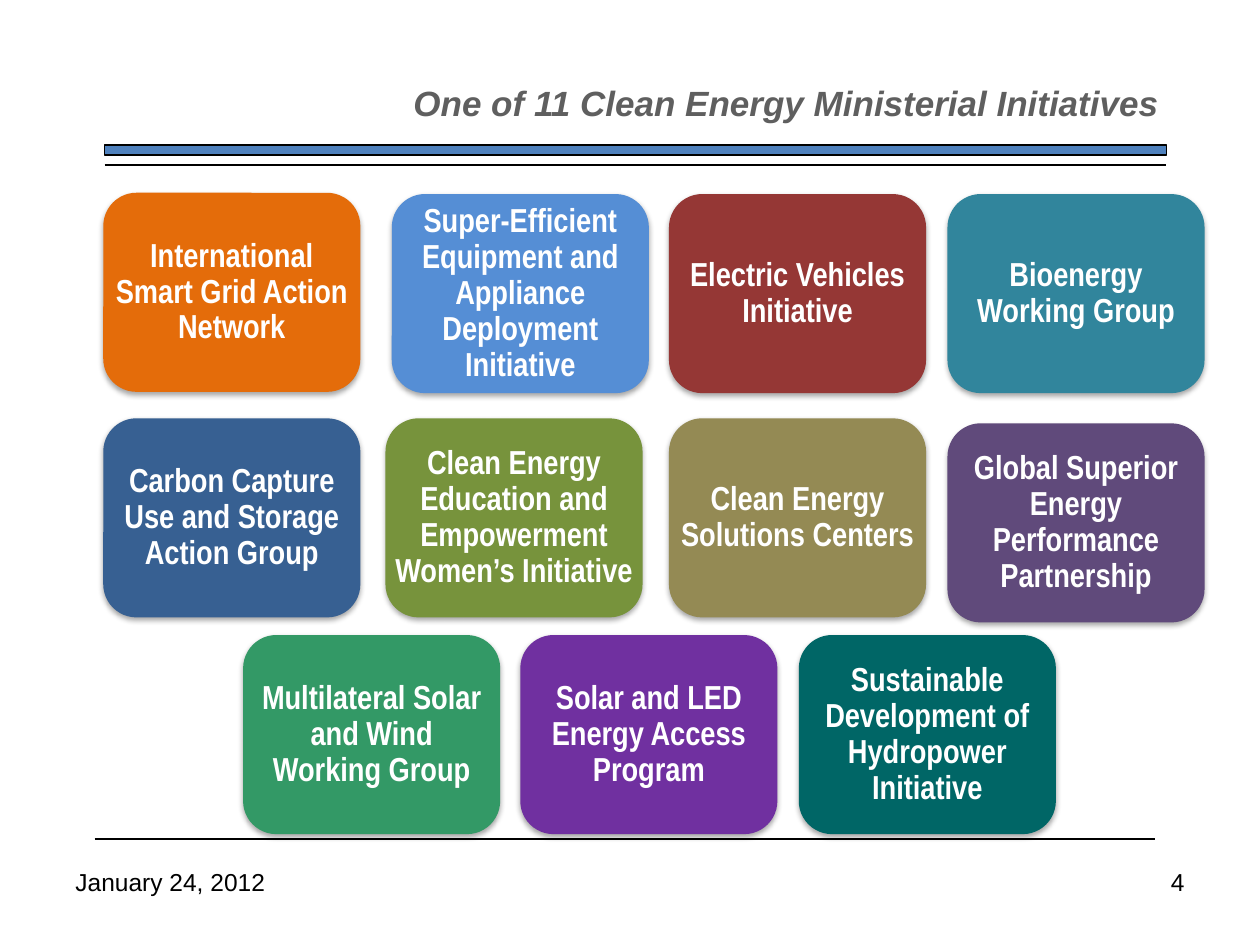
from lxml import etree
from pptx import Presentation
from pptx.dml.color import RGBColor
from pptx.enum.shapes import MSO_CONNECTOR, MSO_SHAPE
from pptx.enum.text import MSO_ANCHOR, PP_ALIGN
from pptx.oxml import parse_xml
from pptx.oxml.ns import nsdecls, qn
from pptx.util import Inches, Pt

CARD_WIDTH, CARD_HEIGHT = 2.04, 1.58

# Each card: left, top, fill, wording
CARDS = [
    (0.82, 1.53, "E46C0A", "International Smart Grid Action Network"),
    (3.11, 1.54, "558ED5", "Super-Efficient Equipment and Appliance Deployment Initiative"),
    (5.31, 1.54, "953735", "Electric Vehicles Initiative"),
    (7.52, 1.54, "31859C", "Bioenergy Working Group"),
    (0.82, 3.32, "376092", "Carbon Capture Use and Storage Action Group"),
    (3.06, 3.32, "77933C", "Clean Energy Education and Empowerment Women’s Initiative"),
    (5.31, 3.32, "948A54", "Clean Energy Solutions Centers"),
    (7.52, 3.36, "604A7B", "Global Superior Energy Performance Partnership"),
    (1.93, 5.04, "339966", "Multilateral Solar and Wind Working Group"),
    (4.13, 5.04, "7030A0", "Solar and LED Energy Access Program"),
    (6.34, 5.04, "006666", "Sustainable Development of Hydropower Initiative"),
]


def color(value):
    return RGBColor.from_string(value)


def place(shape, left, top, width, height):
    shape.left, shape.top = Inches(left), Inches(top)
    shape.width, shape.height = Inches(width), Inches(height)


def set_text(shape, text, size, text_color, alignment, name="Arial", bold=False, italic=False):
    text_frame = shape.text_frame
    text_frame.text = text
    text_frame.word_wrap = True
    paragraph = text_frame.paragraphs[0]
    paragraph.alignment = alignment
    font = paragraph.runs[0].font
    font.name, font.size = name, Pt(size)
    font.bold, font.italic = bold, italic
    font.color.rgb = color(text_color)
    return paragraph


def add_filled_shape(slide, kind, left, top, width, height, fill):
    shape = slide.shapes.add_shape(
        kind, Inches(left), Inches(top), Inches(width), Inches(height))
    shape.shadow.inherit = False
    shape.fill.solid()
    shape.fill.fore_color.rgb = color(fill)
    return shape


def add_soft_shadow(shape):
    effects = shape._element.spPr.find(qn("a:effectLst"))
    effects.append(parse_xml(
        f'<a:outerShdw {nsdecls("a")} blurRad="{Pt(3.1)}" dist="{Pt(1.8)}" '
        'dir="5400000" rotWithShape="0"><a:srgbClr val="000000">'
        '<a:alpha val="35000"/></a:srgbClr></a:outerShdw>'))


def add_card(slide, left, top, fill, text):
    card = add_filled_shape(slide, MSO_SHAPE.ROUNDED_RECTANGLE,
                            left, top, CARD_WIDTH, CARD_HEIGHT, fill)
    card.line.fill.background()
    add_soft_shadow(card)
    text_frame = card.text_frame
    # The rounded corners already inset the text
    text_frame.margin_left = text_frame.margin_right = 0
    text_frame.margin_top = text_frame.margin_bottom = 0
    text_frame.vertical_anchor = MSO_ANCHOR.MIDDLE
    paragraph = set_text(card, text, 19, "FFFFFF", PP_ALIGN.CENTER, "Arial Narrow", bold=True)
    paragraph.line_spacing = 0.9


def add_rule(slide, left, top, width):
    rule = slide.shapes.add_connector(
        MSO_CONNECTOR.STRAIGHT, Inches(left), Inches(top), Inches(left + width), Inches(top))
    rule.line.color.rgb = color("000000")
    rule.line.width = Pt(0.75)
    etree.SubElement(rule._element.spPr, qn("a:effectLst"))


def add_footer(slide, left, text, alignment):
    box = slide.shapes.add_textbox(Inches(left), Inches(6.83), Inches(2.33), Inches(0.52))
    set_text(box, text, 14, "000000", alignment)


def add_title(slide, text):
    title = slide.shapes.title
    place(title, 2.48, 0.6, 6.82, 0.44)
    title.text_frame.vertical_anchor = MSO_ANCHOR.TOP
    set_text(title, text, 20, "5F5F5F", PP_ALIGN.RIGHT, bold=True, italic=True)


def main():
    presentation = Presentation()
    presentation.slide_width, presentation.slide_height = Inches(10), Inches(7.5)
    slide = presentation.slides.add_slide(presentation.slide_layouts[5])

    # Footer, title and rules
    add_footer(slide, 0.5, "January 24, 2012", PP_ALIGN.LEFT)
    add_footer(slide, 7.17, "4", PP_ALIGN.RIGHT)
    add_title(slide, "One of 11 Clean Energy Ministerial Initiatives")
    add_rule(slide, 0.83, 1.31, 8.42)
    add_rule(slide, 0.75, 6.66, 8.42)
    bar = add_filled_shape(slide, MSO_SHAPE.RECTANGLE, 0.83, 1.15, 8.43, 0.08, "4F81BD")
    bar.line.color.rgb = color("000000")
    bar.line.width = Pt(0.75)

    # Initiative cards
    for card in CARDS:
        add_card(slide, *card)

    presentation.save("out.pptx")


if __name__ == "__main__":
    main()
